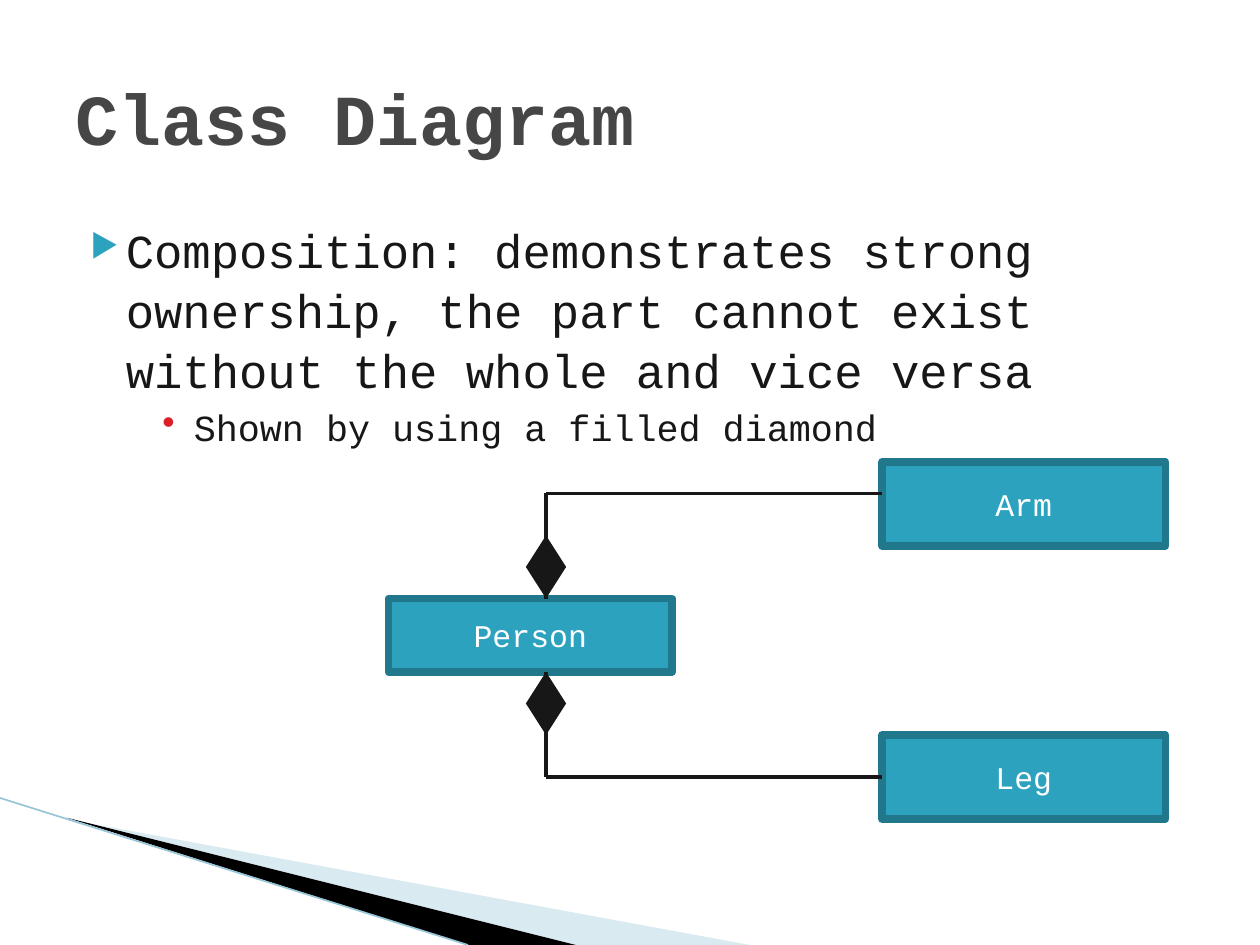
"""Build a class diagram slide that explains composition."""
from dataclasses import dataclass

from lxml.etree import SubElement
from pptx import Presentation
from pptx.dml.color import RGBColor
from pptx.enum.shapes import MSO_CONNECTOR as Connector, MSO_SHAPE as Shape
from pptx.enum.text import MSO_ANCHOR as Anchor, PP_ALIGN as Align
from pptx.oxml.ns import qn
from pptx.util import Pt


@dataclass(frozen=True)
class Theme:
    font: str = "Courier New"
    ink: str = "171717"
    title: str = "464646"
    fill: str = "2DA2BF"
    border: str = "21788D"
    bullet: str = "DA1F28"
    white: str = "FFFFFF"
    black: str = "000000"
    pale: str = "A0CBDC"
    edge: str = "97C5D8"
    title_size: int = 41
    body_size: int = 27
    detail_size: int = 21
    label_size: int = 18


theme = Theme()


def write(paragraph, text, *, size, color, bold=False, align=Align.LEFT, before=0,
          spacing=None, bullet=None, bullet_color=None, bullet_percent=100,
          margin=0, indent=0):
    if bullet:
        properties = paragraph._p.get_or_add_pPr()
        properties.set("marL", str(Pt(margin)))
        properties.set("indent", str(Pt(indent)))
        tint = SubElement(properties, qn("a:buClr"))
        SubElement(tint, qn("a:srgbClr"), val=bullet_color)
        SubElement(properties, qn("a:buSzPct"), val=str(bullet_percent * 1000))
        SubElement(properties, qn("a:buChar"), char=bullet)
    paragraph.alignment = align
    paragraph.space_before = Pt(before)
    paragraph.line_spacing = spacing
    span = paragraph.add_run()
    span.text = text
    span.font.name = theme.font
    span.font.size = Pt(size)
    span.font.bold = bold
    span.font.color.rgb = RGBColor.from_string(color)


def draw_line(start, end, color, width):
    line = page.shapes.add_connector(Connector.STRAIGHT, *map(Pt, start + end))
    line.line.color.rgb = RGBColor.from_string(color)
    line.line.width = Pt(width)
    SubElement(line._element.spPr, qn("a:effectLst"))
    return line


deck = Presentation()
deck.slide_width, deck.slide_height = Pt(720), Pt(540)
page = deck.slides.add_slide(deck.slide_layouts[6])

swooshes = [
    ([(39.6, 468.4), (428.4, 540), (328.3, 540)], theme.pale, 40),
    ([(38.2, 467.3), (329, 540), (267.8, 540)], theme.black, 100),
]
for points, color, opacity in swooshes:
    corners = [(Pt(x), Pt(y)) for x, y in points]
    builder = page.shapes.build_freeform(*corners[0])
    builder.add_line_segments(corners[1:], close=True)
    swoosh = builder.convert_to_shape()
    swoosh.shadow.inherit = False
    swoosh.fill.solid()
    swoosh.fill.fore_color.rgb = RGBColor.from_string(color)
    swoosh.line.fill.background()
    if opacity < 100:
        tint = swoosh._element.spPr.find(qn("a:solidFill"))[0]
        SubElement(tint, qn("a:alpha"), val=str(opacity * 1000))
draw_line((0, 456), (267.5, 540), theme.edge, 0.95)

body = page.shapes.add_textbox(Pt(36), Pt(116.6), Pt(648), Pt(356.4)).text_frame
body.word_wrap = True
body.margin_top = Pt(8)
write(body.paragraphs[0],
      "Composition: demonstrates strong ownership, the part cannot exist "
      "without the whole and vice versa",
      size=theme.body_size, color=theme.ink, spacing=1.06, bullet="▶",
      bullet_color=theme.fill, bullet_percent=68, margin=28.8, indent=-20.16)
write(body.add_paragraph(), "Shown by using a filled diamond",
      size=theme.detail_size, color=theme.ink, before=3.5, bullet="•",
      bullet_color=theme.bullet, margin=67.7, indent=-18)

title = page.shapes.add_textbox(Pt(36), Pt(21.6), Pt(648), Pt(90)).text_frame
title.word_wrap = True
title.vertical_anchor = Anchor.MIDDLE
write(title.paragraphs[0], "Class Diagram", size=theme.title_size,
      color=theme.title, bold=True)

classes = {}
for name, left, top, height in [("Person", 222, 342, 42), ("Arm", 504, 264, 48),
                                ("Leg", 504, 420, 48)]:
    box = page.shapes.add_shape(Shape.RECTANGLE, Pt(left), Pt(top), Pt(162), Pt(height))
    box.shadow.inherit = False
    box.fill.solid()
    box.fill.fore_color.rgb = RGBColor.from_string(theme.fill)
    box.line.color.rgb = RGBColor.from_string(theme.border)
    box.line.width = Pt(4.33)
    box.text_frame.vertical_anchor = Anchor.MIDDLE
    write(box.text_frame.paragraphs[0], name, size=theme.label_size,
          color=theme.white, align=Align.CENTER)
    classes[name] = box

axis, part_left = 312, 504
for person_edge, part_level, diamond_middle in [(342, 282, 324), (384, 444, 402)]:
    draw_line((axis, part_level), (axis, person_edge), theme.ink, 1.75)
    branch = draw_line((axis, part_level), (part_left, part_level), theme.ink, 1.75)
    diamond = page.shapes.add_shape(Shape.FLOWCHART_DECISION, Pt(axis - 18),
                                    Pt(diamond_middle - 11.5), Pt(36), Pt(23))
    diamond.rotation = 90
    diamond.shadow.inherit = False
    diamond.fill.solid()
    diamond.fill.fore_color.rgb = RGBColor.from_string(theme.ink)
    diamond.line.fill.background()
branch.end_connect(classes["Leg"], 1)

deck.save("out.pptx")
